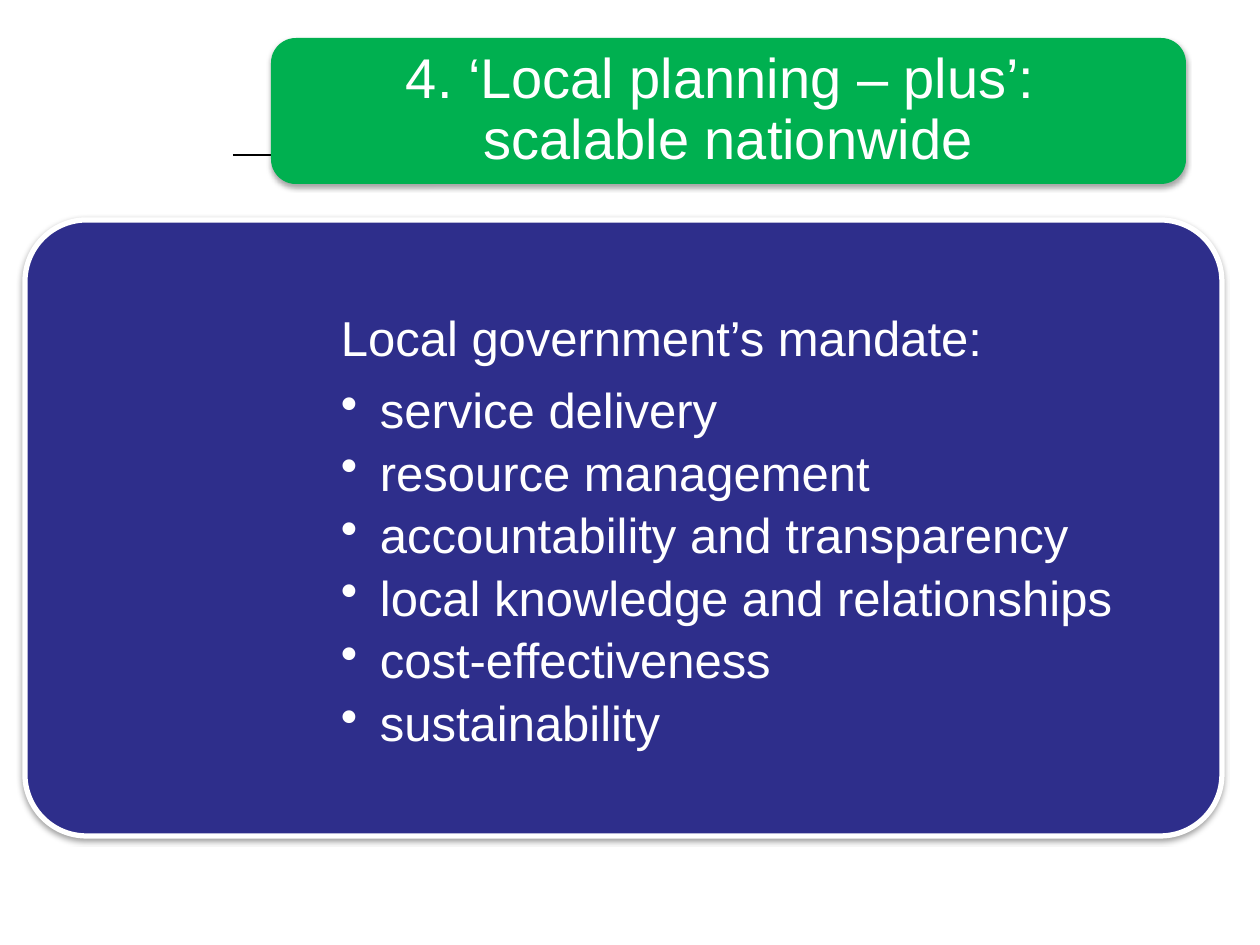
import pptx
import pptx.dml.color
import pptx.enum.shapes
import pptx.enum.text
import pptx.oxml.ns
import pptx.util
from lxml import etree

PX = 914400 // 126
FONT = "Arial"
COLORS = {"title": "00B050", "panel": "2E2E8B", "text": "FFFFFF",
          "border": "FFFFFF", "rule": "000000", "shadow": "000000"}
TITLE = "4. ‘Local planning – plus’: \vscalable nationwide"
HEADING = "Local government’s mandate:"
MANDATES = ["service delivery", "resource management",
            "accountability and transparency",
            "local knowledge and relationships",
            "cost-effectiveness", "sustainability"]


def px(length):
    return pptx.util.Emu(length * PX)


def color(name):
    return pptx.dml.color.RGBColor.from_string(COLORS[name])


def add_element(parent, tag, **attributes):
    element = etree.SubElement(parent, pptx.oxml.ns.qn(tag))
    for name, value in attributes.items():
        element.set(name, str(value))
    return element


def add_shadow(shape, opacity, distance):
    """Give the shape a soft shadow straight below; distance is in points."""
    shape.shadow.inherit = False
    effects = shape._element.spPr.find(pptx.oxml.ns.qn("a:effectLst"))
    shadow = add_element(effects, "a:outerShdw", blurRad=pptx.util.Pt(3.1),
                         dist=pptx.util.Pt(distance), dir=90 * 60000,
                         rotWithShape=0)
    shade = add_element(shadow, "a:srgbClr", val=COLORS["shadow"])
    add_element(shade, "a:alpha", val=opacity * 1000)


def add_rounded_box(slide, box, fill, corner):
    shape = slide.shapes.add_shape(
        pptx.enum.shapes.MSO_SHAPE.ROUNDED_RECTANGLE, *map(px, box))
    shape.adjustments[0] = corner
    shape.fill.solid()
    shape.fill.fore_color.rgb = color(fill)
    shape.line.fill.background()
    return shape


def set_margins(frame, left, top, right, bottom):
    frame.word_wrap = True
    frame.margin_left, frame.margin_top = px(left), px(top)
    frame.margin_right, frame.margin_bottom = px(right), px(bottom)


def write_text(paragraph, text, size, align="LEFT", space_after=0, indent=0):
    """Fill one paragraph; an indent in px makes it a bullet."""
    paragraph.text = text
    paragraph.alignment = getattr(pptx.enum.text.PP_ALIGN, align)
    paragraph.line_spacing = 0.9
    paragraph.space_after = pptx.util.Pt(space_after)
    if indent:
        properties = paragraph._p.get_or_add_pPr()
        properties.set("marL", str(px(indent)))
        properties.set("indent", str(px(-indent)))
        add_element(properties, "a:buChar", char="•")
    for run in paragraph.runs:
        run.font.name = FONT
        run.font.size = pptx.util.Pt(size)
        run.font.color.rgb = color("text")


def add_rule(slide, left, right, y):
    rule = slide.shapes.add_connector(
        pptx.enum.shapes.MSO_CONNECTOR.STRAIGHT,
        px(left), px(y), px(right), px(y))
    rule.line.color.rgb = color("rule")
    rule.line.width = pptx.util.Pt(0.75)
    add_element(rule._element.spPr, "a:effectLst")


def add_panel(slide, box):
    panel = add_rounded_box(slide, box, "panel", corner=0.1)
    panel.line.color.rgb = color("border")
    panel.line.width = pptx.util.Pt(3)
    add_shadow(panel, opacity=38, distance=1.6)
    frame = panel.text_frame
    frame.vertical_anchor = pptx.enum.text.MSO_ANCHOR.TOP
    set_margins(frame, left=298, top=76, right=0, bottom=0)
    write_text(frame.paragraphs[0], HEADING, size=28, space_after=11)
    for mandate in MANDATES:
        write_text(frame.add_paragraph(), mandate, size=28,
                   space_after=5.5, indent=39)


def add_title(slide, box):
    banner = add_rounded_box(slide, box, "title", corner=0.17)
    add_shadow(banner, opacity=35, distance=1.8)
    frame = banner.text_frame
    frame.vertical_anchor = pptx.enum.text.MSO_ANCHOR.MIDDLE
    set_margins(frame, left=9, top=9, right=9, bottom=9)
    write_text(frame.paragraphs[0], TITLE, size=32, align="CENTER")


def main():
    presentation = pptx.Presentation()
    presentation.slide_width, presentation.slide_height = px(1260), px(945)
    slide = presentation.slides.add_slide(presentation.slide_layouts[6])
    add_rule(slide, left=233, right=1155, y=155)
    add_panel(slide, (25, 220, 1197, 616))
    add_title(slide, (271, 38, 915, 146))
    presentation.save("out.pptx")


if __name__ == "__main__":
    main()
